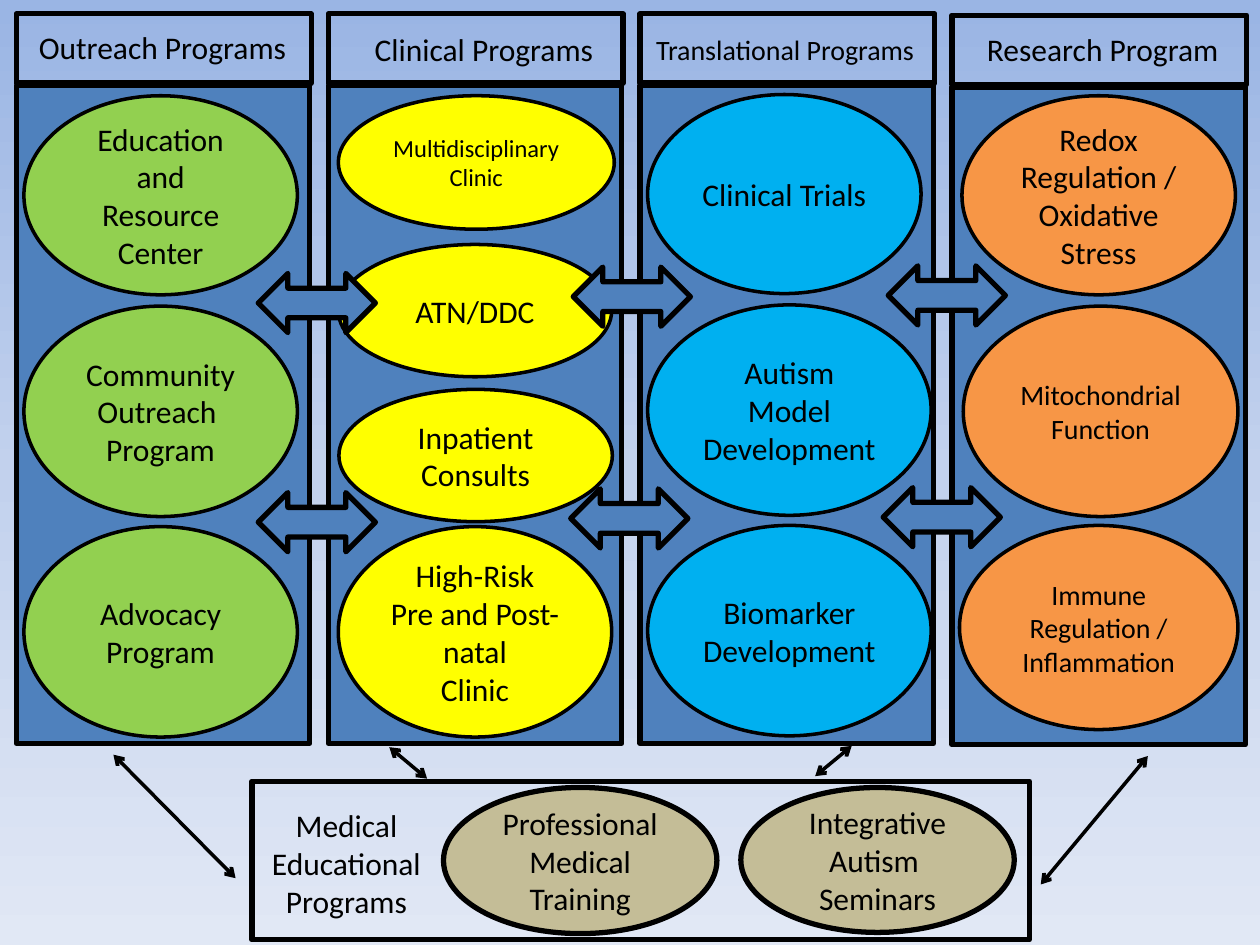
from copy import deepcopy
from lxml import etree
from pptx import Presentation
from pptx import util as u
from pptx.dml.color import RGBColor
from pptx.enum import shapes, text
from pptx.oxml.ns import qn

KIND = shapes.MSO_SHAPE
ALIGN = text.PP_ALIGN
BLUE, BLACK, TAN = "4F81BD", "000000", "C4BD97"
LEFT, PITCH, WIDTH = 0.13, 2.475, 2.33
ROWS = [0.76, 2.43, 4.18]
SHORT, TALL, WIDE = 1.58, 1.67, 2.17

COLUMNS = [
    ("Outreach Programs", 18, (0.08, 0.17, 2.18, 0.4), 0, "92D050", [
        ("Education and Resource Center", 18, 0.06, ROWS[0], WIDE, SHORT),
        ("Community Outreach \nProgram", 18, 0.06, ROWS[1], WIDE, TALL),
        ("Advocacy\nProgram", 18, 0.06, ROWS[2], WIDE, TALL)]),
    ("Clinical Programs", 18, (0.27, 0.19, 1.95, 0.4), 0, "FFFF00", [
        ("Multidisciplinary\nClinic", 14, 0.08, ROWS[0], 2.19, 1.06),
        ("ATN/DDC", 18, 0.08, 1.94, WIDE, 1.05),
        ("High-Risk\nPre and Post-natal\nClinic", 18, 0.08, ROWS[2], WIDE, TALL)]),
    ("Translational Programs", 16, (0.03, 0.21, 2.27, 0.37), 0, "00B0F0", [
        ("Clinical Trials", 18, 0.06, 0.75, WIDE, SHORT),
        ("Autism\nModel Development", 18, 0.06, 2.42, 2.25, TALL),
        ("Biomarker\nDevelopment", 18, 0.06, 4.17, 2.25, TALL)]),
    ("Research Program", 18, (0.18, 0.19, 2.06, 0.4), 0.01, "F79646", [
        ("Redox Regulation / Oxidative Stress", 18, 0.08, ROWS[0], WIDE, SHORT),
        ("Mitochondrial Function", 16, 0.09, ROWS[1], 2.18, TALL),
        ("Immune Regulation / Inflammation", 16, 0.06, 4.17, 2.21, 1.62)]),
]
LINKS = [(0.9, 5.99, 1.87, 6.97), (9.11, 6, 8.26, 7.02),
         (6.76, 5.92, 6.47, 6.16), (3.09, 5.93, 3.39, 6.18)]
ARROWS = [(2.05, 2.17), (2.05, 3.91), (4.55, 2.12),
          (4.53, 3.88), (7.05, 2.11), (7.01, 3.87)]


def color(code):
    return RGBColor.from_string(code)


def scale(*nums):
    return [u.Inches(n) for n in nums]


def write(frame, words, size=18, align=ALIGN.CENTER, wrap=True,
          anchor=text.MSO_ANCHOR.MIDDLE):
    frame.text = words
    frame.word_wrap = wrap
    frame.vertical_anchor = anchor
    for para in frame.paragraphs:
        para.alignment = align
        font = para.runs[0].font
        font.name, font.size = "Calibri", u.Pt(size)
        font.color.rgb = color(BLACK)


def label(parent, words, spot, **style):
    box = parent.add_textbox(*scale(*spot))
    write(box.text_frame, words, anchor=text.MSO_ANCHOR.TOP, **style)


def draw(parent, kind, spot, fill=None, weight=3):
    shape = parent.add_shape(kind, *scale(*spot))
    shape.shadow.inherit = False
    if fill:
        shape.fill.solid()
        shape.fill.fore_color.rgb = color(fill)
    else:
        shape.fill.background()
    shape.line.color.rgb = color(BLACK)
    shape.line.width = u.Pt(weight)
    return shape


def bubble(parent, words, spot, fill, size=18, weight=2):
    shape = draw(parent, KIND.OVAL, spot, fill, weight)
    write(shape.text_frame, words, size)


def link(parent, ends):
    line = parent.add_connector(shapes.MSO_CONNECTOR.STRAIGHT, *scale(*ends))
    line.line.color.rgb = color(BLACK)
    line.line.width = u.Pt(2)
    stroke = line.line._get_or_add_ln()
    for end in ("a:headEnd", "a:tailEnd"):
        etree.SubElement(stroke, qn(end), type="arrow")
    etree.SubElement(stroke.getparent(), qn("a:effectLst"))


def column(slide, left, title, size, spot, drop, fill, items):
    group = slide.shapes.add_group_shape().shapes
    draw(group, KIND.RECTANGLE, (left, 0.68 + drop, WIDTH, 5.22), BLUE)
    draw(group, KIND.RECTANGLE, (left, 0.11 + drop, WIDTH + 0.01, 0.55))
    for words, points, shift, top, wide, high in items:
        bubble(group, words, (left + shift, top, wide, high), fill, points)
    label(group, title, (left + spot[0], *spot[1:]), size=size,
          align=ALIGN.LEFT, wrap=False)


def shade(slide, codes):
    fill = slide.background.fill
    fill.gradient()
    fill.gradient_angle = 270
    first = slide.element.find(".//" + qn("a:gs"))
    first.addnext(deepcopy(first))
    for step, (stop, code) in enumerate(zip(fill.gradient_stops, codes)):
        stop.position = step / 2
        stop.color.rgb = color(code)


def main():
    deck = Presentation()
    deck.slide_width, deck.slide_height = scale(10, 7.5)
    slide = deck.slides.add_slide(deck.slide_layouts[6])
    shade(slide, ["9AB5E4", "C2D1ED", "E1E8F5"])
    for place, parts in enumerate(COLUMNS):
        column(slide, LEFT + place * PITCH, *parts)

    base = slide.shapes
    bubble(base, "Professional\nMedical\nTraining", (3.52, 6.25, WIDE, 1.16), TAN, weight=3)
    bubble(base, "Integrative\nAutism \nSeminars", (5.88, 6.25, WIDE, 1.15), TAN, weight=3)
    draw(base, KIND.RECTANGLE, (2, 6.2, 6.17, 1.26))
    label(base, "Medical\nEducational\nPrograms", (2.05, 6.35, 1.4, 1.01))
    for ends in LINKS:
        link(base, ends)
    for spot in ARROWS:
        draw(base, KIND.LEFT_RIGHT_ARROW, (*spot, 0.93, 0.47), BLUE)
    bubble(base, "Inpatient\nConsults", (2.69, 3.09, WIDE, 1.05), "FFFF00")
    deck.save("out.pptx")


if __name__ == "__main__":
    main()
